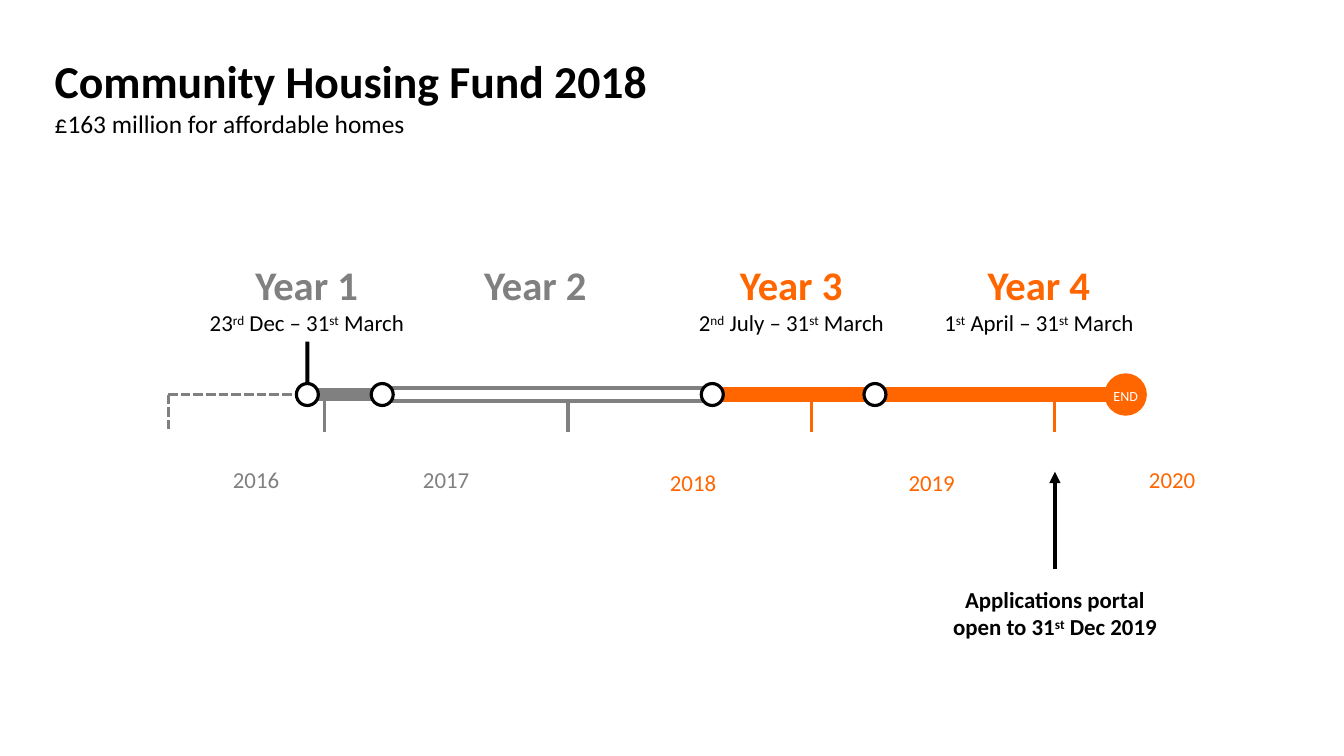
from pptx import Presentation
from pptx.dml.color import RGBColor
from pptx.enum.dml import MSO_LINE as Dash
from pptx.enum.shapes import MSO_CONNECTOR as Link, MSO_SHAPE as Shape
from pptx.enum.text import MSO_AUTO_SIZE as Fit, PP_ALIGN as Align
from pptx.oxml.ns import qn
from pptx.util import Cm, Pt
from lxml.etree import SubElement

BLACK = RGBColor(0x00, 0x00, 0x00)
WHITE = RGBColor(0xFF, 0xFF, 0xFF)
GREY = RGBColor(0x80, 0x80, 0x80)
ORANGE = RGBColor(0xFF, 0x66, 0x00)


def add_text(slide, box, lines, align=Align.CENTER):
    """Each line is (text, size, colour, bold); ^ marks off superscripts."""
    frame = slide.shapes.add_textbox(*map(Cm, box)).text_frame
    frame.word_wrap = True
    frame.auto_size = Fit.SHAPE_TO_FIT_TEXT
    for i, (text, size, color, bold) in enumerate(lines):
        para = frame.add_paragraph() if i else frame.paragraphs[0]
        para.alignment = align
        for j, part in enumerate(text.split("^")):
            run = para.add_run()
            run.text = part
            look = {"name": "Calibri", "size": Pt(size), "bold": bold}
            for key, value in look.items():
                setattr(run.font, key, value)
            run.font.color.rgb = color
            if j % 2:
                run._r.get_or_add_rPr().set("baseline", "30000")


def add_line(slide, start, end, color, **look):
    line = slide.shapes.add_connector(Link.STRAIGHT, *map(Cm, start + end))
    line.line.color.rgb = color
    for key, value in {"width": Pt(2.5), **look}.items():
        setattr(line.line, key, value)
    SubElement(line._element.spPr, qn("a:effectLst"))
    return line


def add_form(slide, kind, mid, size, fill, edge=None, width=1):
    """Place a shape around its middle point."""
    (x, y), (w, h) = mid, size
    form = slide.shapes.add_shape(
        kind, Cm(x - w / 2), Cm(y - h / 2), Cm(w), Cm(h))
    form.shadow.inherit = False
    form.fill.solid()
    form.fill.fore_color.rgb = fill
    if edge is None:
        form.line.fill.background()
    else:
        form.line.color.rgb = edge
        form.line.width = Pt(width)
    return form


def draw_title(slide, box):
    add_text(slide, box, [
        ("Community Housing Fund 2018", 36, BLACK, True),
        ("£163 million for affordable homes", 20, BLACK, False),
    ], Align.LEFT)


def draw_axis(slide, box):
    left, top, width, height = box
    mid = top + height / 2
    drop = mid + 1.04

    # Base line and year ticks
    add_line(slide, (left + 4.14, mid), (left + 26.78, mid), ORANGE)
    for i, color in enumerate((GREY, GREY, ORANGE, ORANGE)):
        x = left + 4.35 + 6.76 * i
        add_line(slide, (x, mid), (x, drop), color)

    # Dashed lead-in
    for end in ((left, drop), (left + 3.56, mid)):
        add_line(slide, (left, mid), end, GREY, dash_style=Dash.SQUARE_DOT)

    # Phase bars
    bars = [(3.92, 2.03, 0.36, GREY, None, 0),
            (6.0, 9.25, 0.38, WHITE, GREY, 3),
            (14.99, 4.65, 0.38, ORANGE, ORANGE, 1),
            (19.69, 6.76, 0.38, ORANGE, ORANGE, 1)]
    for x, long, thick, fill, edge, weight in bars:
        add_form(slide, Shape.RECTANGLE, (left + x + long / 2, mid),
                 (long, thick), fill, edge, weight)

    # Dots, with a pin on the first
    dots = [add_form(slide, Shape.OVAL, (left + x, mid), (0.61, 0.61),
                     WHITE, BLACK, 2.5) for x in (3.87, 5.95, 15.12, 19.64)]
    x = left + 3.87
    pin = add_line(slide, (x, mid - 0.3), (x, mid - 1.47), BLACK, width=Pt(3))
    pin.begin_connect(dots[0], 0)

    # End marker
    x = left + width - height / 2
    add_form(slide, Shape.OVAL, (x, mid), (height, height),
             ORANGE, ORANGE, 2.5)
    add_text(slide, (x - 0.75, mid - 0.32, 1.5, 0.61),
             [("END", 11, WHITE, False)])


def draw_phases(slide, box):
    left, top, _, height = box
    phases = [(0, GREY, "23^rd^ Dec – 31^st^ March"),
              (6.35, GREY, None),
              (13.46, ORANGE, "2^nd^ July – 31^st^ March"),
              (20.34, ORANGE, "1^st^ April – 31^st^ March")]
    for i, (x, color, dates) in enumerate(phases, 1):
        lines = [(f"Year {i}", 32, color, True)]
        if dates:
            lines.append((dates, 18, BLACK, False))
        add_text(slide, (left + x, top, 8.51, height), lines)


def draw_years(slide, box):
    left, top, _, height = box
    years = [(0, 0, GREY), (5.28, 0, GREY), (12.14, 0.07, ORANGE),
             (18.77, 0.07, ORANGE), (25.45, 0, ORANGE)]
    for i, (x, y, color) in enumerate(years):
        add_text(slide, (left + x, top + y, 2.13, height),
                 [(str(2016 + i), 18, color, False)])


def draw_portal(slide, box):
    left, top, width, height = box
    x = left + width / 2
    arrow = add_line(slide, (x, top + 2.71), (x, top), BLACK, width=Pt(3))
    SubElement(arrow.line._get_or_add_ln(), qn("a:tailEnd"), type="triangle")
    add_text(slide, (left, top + 3.04, width, height - 3.04), [
        ("Applications portal", 18, BLACK, True),
        ("open to 31^st^ Dec 2019", 18, BLACK, True),
    ])


def main():
    deck = Presentation()
    deck.slide_width, deck.slide_height = Cm(37.34), Cm(21.01)
    slide = deck.slides.add_slide(deck.slide_layouts[6])
    draw_axis(slide, (4.67, 10.42, 27.15, 1.09))
    draw_years(slide, (6.05, 12.83, 27.58, 1.02))
    draw_phases(slide, (4.27, 7.11, 28.85, 3.18))
    draw_portal(slide, (23.9, 13.11, 10.82, 4.84))
    draw_title(slide, (1.27, 1.35, 19.74, 2.64))
    deck.save("out.pptx")


if __name__ == "__main__":
    main()
